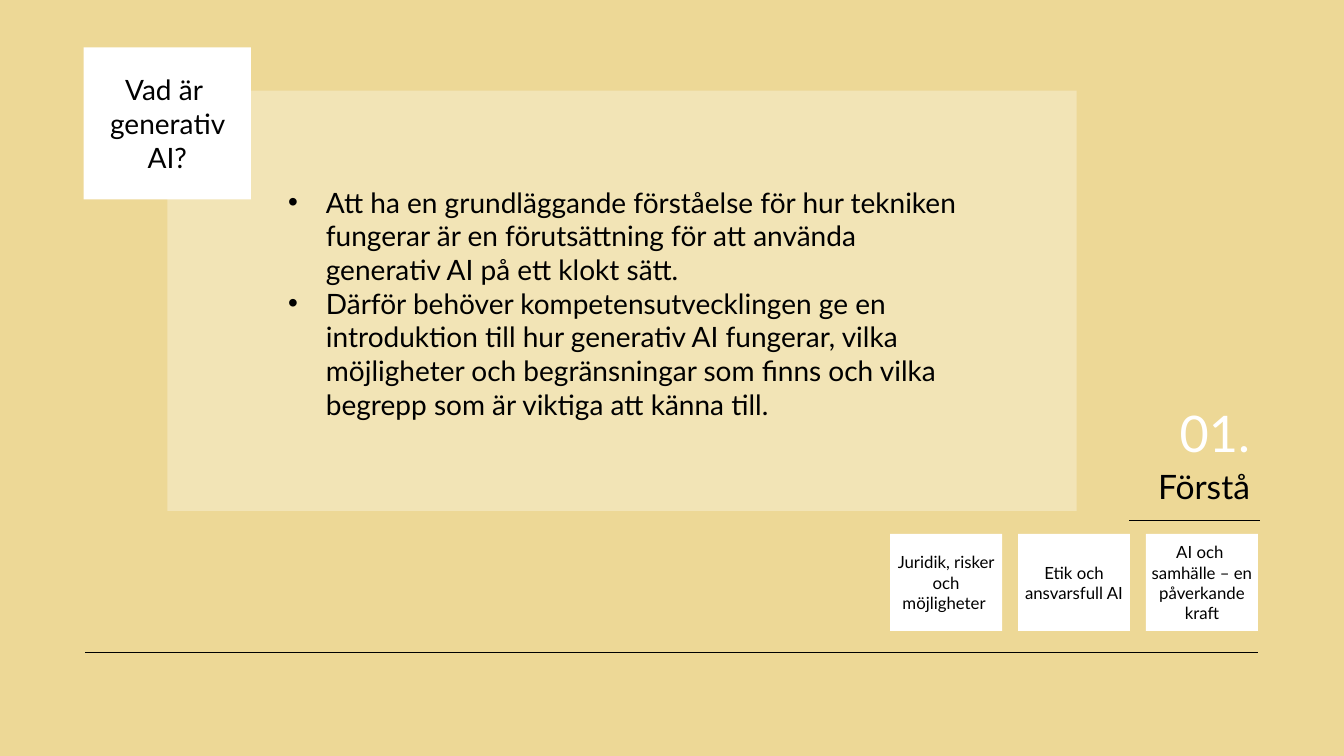
"""Build the slide on understanding generative AI."""
from dataclasses import dataclass

from lxml.etree import SubElement
from pptx import Presentation
from pptx.dml.color import RGBColor
from pptx.enum.shapes import MSO_CONNECTOR, MSO_SHAPE
from pptx.enum.text import MSO_ANCHOR, PP_ALIGN
from pptx.oxml.ns import qn
from pptx.util import Pt

COLORS = {"sand": "EDD896", "white": "FFFFFF", "black": "000000"}
FONT = "Lato"
BULLET_INDENT = 27
CARD_LEFT, CARD_STEP = 635.8, 91.4


@dataclass(frozen=True)
class Box:
    left: float
    top: float
    width: float
    height: float

    def lengths(self) -> tuple:
        return Pt(self.left), Pt(self.top), Pt(self.width), Pt(self.height)


@dataclass(frozen=True)
class Card:
    text: str
    box: Box
    size: float = 12
    inset: float = 0


@dataclass(frozen=True)
class Rule:
    start: float
    end: float
    y: float


def rgb(name: str) -> RGBColor:
    return RGBColor.from_string(COLORS[name])


def write(frame, *texts: str, size: float, color: str = "black",
          align=PP_ALIGN.LEFT, anchor=MSO_ANCHOR.TOP,
          spacing: float = 1.0, bullet: str = "") -> None:
    frame.word_wrap = True
    frame.vertical_anchor = anchor
    for index, text in enumerate(texts):
        paragraph = frame.add_paragraph() if index else frame.paragraphs[0]
        paragraph.text = text
        paragraph.alignment = align
        paragraph.line_spacing = spacing
        if bullet:
            properties = paragraph._p.get_or_add_pPr()
            properties.set("marL", str(Pt(BULLET_INDENT)))
            properties.set("indent", str(-Pt(BULLET_INDENT)))
            SubElement(properties, qn("a:buFont"), typeface="Arial")
            SubElement(properties, qn("a:buChar"), char=bullet)
        for run in paragraph.runs:
            run.font.name = FONT
            run.font.size = Pt(size)
            run.font.color.rgb = rgb(color)


def add_panel(slide, box: Box, opacity: int = 100):
    panel = slide.shapes.add_shape(MSO_SHAPE.RECTANGLE, *box.lengths())
    panel.shadow.inherit = False
    panel.fill.solid()
    panel.fill.fore_color.rgb = rgb("white")
    panel.line.fill.background()
    if opacity < 100:
        color = panel._element.spPr.find(qn("a:solidFill"))[0]
        SubElement(color, qn("a:alpha"), val=str(opacity * 1000))
    return panel


def add_card(slide, card: Card) -> None:
    frame = add_panel(slide, card.box).text_frame
    frame.margin_left = frame.margin_right = Pt(card.inset)
    frame.margin_top = frame.margin_bottom = Pt(card.inset / 2)
    write(frame, card.text, size=card.size, align=PP_ALIGN.CENTER,
          anchor=MSO_ANCHOR.MIDDLE)


def add_rule(slide, rule: Rule) -> None:
    line = slide.shapes.add_connector(
        MSO_CONNECTOR.STRAIGHT, Pt(rule.start), Pt(rule.y), Pt(rule.end), Pt(rule.y))
    line.line.width = Pt(0.5)
    line.line.color.rgb = rgb("black")
    SubElement(line._element.spPr, qn("a:effectLst"))


def add_text(slide, box: Box, *texts: str, **formatting) -> None:
    write(slide.shapes.add_textbox(*box.lengths()).text_frame, *texts, **formatting)


def main() -> None:
    deck = Presentation()
    deck.slide_width, deck.slide_height = Pt(960), Pt(540)
    slide = deck.slides.add_slide(deck.slide_layouts[6])
    slide.background.fill.solid()
    slide.background.fill.fore_color.rgb = rgb("sand")

    add_rule(slide, Rule(61, 898.6, 466.3))
    add_panel(slide, Box(119.6, 64.8, 649.4, 300.2), opacity=31)
    add_text(
        slide, Box(198.7, 128.9, 491.8, 177.1),
        "Att ha en grundläggande förståelse för hur tekniken fungerar är en "
        "förutsättning för att använda generativ AI på ett klokt sätt.",
        "Därför behöver kompetensutvecklingen ge en introduktion till hur "
        "generativ AI fungerar, vilka möjligheter och begränsningar som finns "
        "och vilka begrepp som är viktiga att känna till.",
        size=20, bullet="•")
    add_card(slide, Card("Vad är \vgenerativ AI?", Box(59.8, 33.8, 119.5, 108.7),
                         size=20, inset=7.2))

    add_text(slide, Box(830.2, 293.8, 69.8, 41), "01.", size=36, color="white",
             align=PP_ALIGN.RIGHT, anchor=MSO_ANCHOR.BOTTOM, spacing=0.9)
    add_text(slide, Box(637.2, 332.6, 262.8, 31.7), "Förstå", size=24,
             align=PP_ALIGN.RIGHT, spacing=0.9)
    add_rule(slide, Rule(900, 806.4, 371.5))

    topics = ("Juridik, risker och möjligheter ", "Etik och ansvarsfull AI",
              "AI och \vsamhälle – en påverkande kraft")
    for index, topic in enumerate(topics):
        add_card(slide, Card(topic, Box(CARD_LEFT + index * CARD_STEP, 381.4, 80, 69.2)))

    deck.save("out.pptx")


if __name__ == "__main__":
    main()
